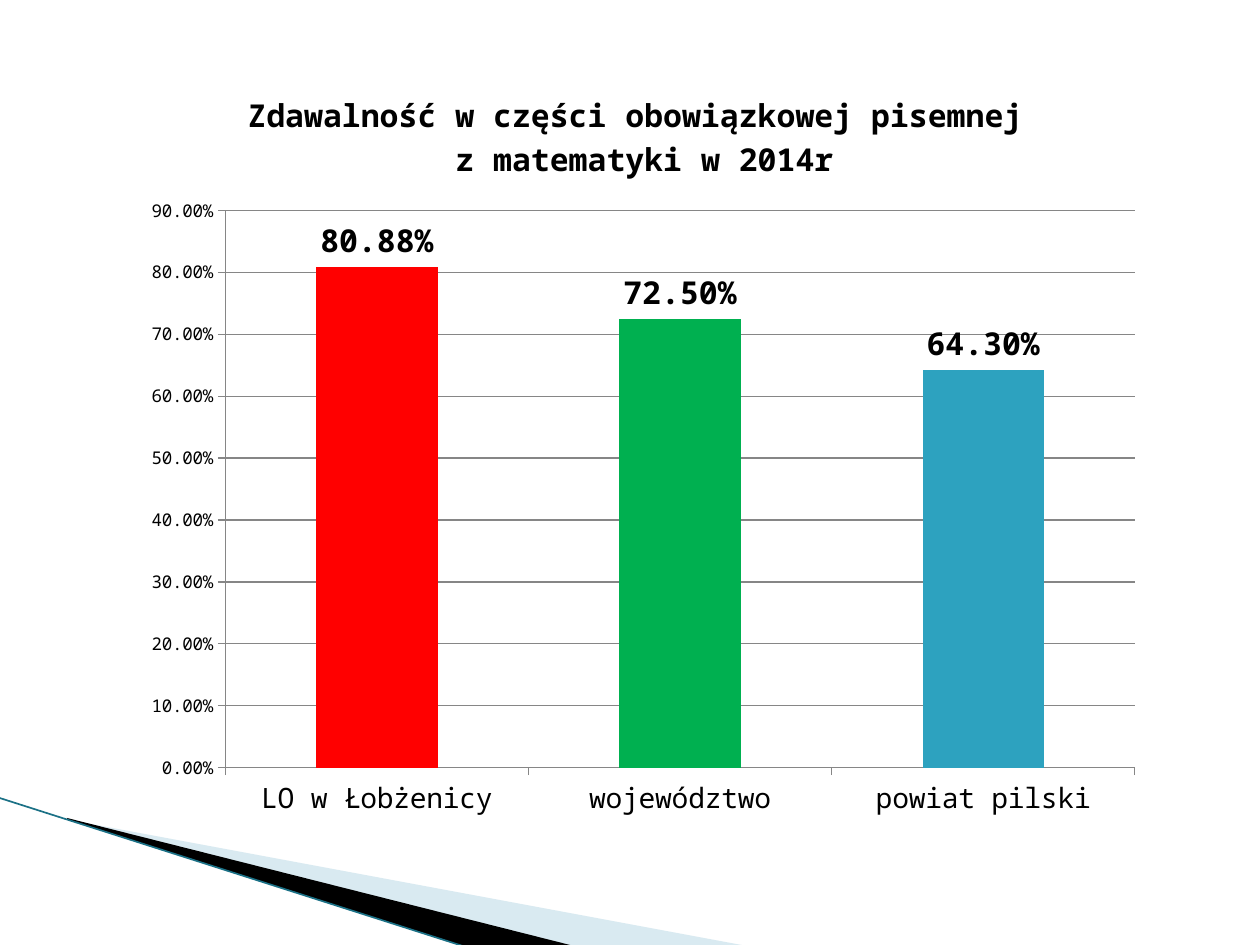
from lxml import etree
from pptx import Presentation
from pptx.chart.data import CategoryChartData
from pptx.dml.color import RGBColor
from pptx.enum.chart import XL_CHART_TYPE, XL_LABEL_POSITION, XL_TICK_MARK
from pptx.enum.shapes import MSO_CONNECTOR
from pptx.oxml import parse_xml
from pptx.oxml.ns import nsdecls, qn
from pptx.util import Cm, Pt

COLUMNS = XL_CHART_TYPE.COLUMN_CLUSTERED
ABOVE_BAR = XL_LABEL_POSITION.OUTSIDE_END
TICK_OUT = XL_TICK_MARK.OUTSIDE
STRAIGHT = MSO_CONNECTOR.STRAIGHT

FONT = "Noto Sans Mono"
PERCENT = "0.00%"
COLORS = {
    "text": "000000",
    "axis": "868686",
    "school": "FF0000",
    "province": "00B050",
    "county": "2DA2BF",
    "pale": "A0CBDC",
    "dark": "000000",
    "edge": "1B7186",
}
RESULTS = [
    ("LO w Łobżenicy", 0.8088, "school"),
    ("województwo", 0.725, "province"),
    ("powiat pilski", 0.643, "county"),
]
TITLE = ["Zdawalność w części obowiązkowej pisemnej ", "z matematyki w 2014r"]


def rgb(name):
    return RGBColor.from_string(COLORS[name])


def set_font(font, size, bold=False):
    font.name = FONT
    font.size = Pt(size)
    font.bold = bold
    font.color.rgb = rgb("text")


def add_wedge(s, left, top, points, color, alpha=None):
    """Draw a filled outline; points are in cm from left, top."""
    corners = [(Cm(left + x), Cm(top + y)) for x, y in points]
    builder = s.shapes.build_freeform(*corners[0])
    builder.add_line_segments(corners[1:])
    sp = builder.convert_to_shape()
    sp.shadow.inherit = False
    sp.line.fill.background()
    sp.fill.solid()
    sp.fill.fore_color.rgb = rgb(color)
    if alpha:
        clr = sp.fill._xPr.find(".//" + qn("a:srgbClr"))
        etree.SubElement(clr, qn("a:alpha")).set("val", str(alpha * 1000))


def add_corner(s, left, top, width, height):
    """Draw the wedges and the edge line in the lower left corner."""
    tip_x, tip_y = 1.4, 0.45
    add_wedge(s, left, top, [(tip_x, tip_y), (width, height),
                             (11.58, height), (tip_x, tip_y - 0.02)], "pale", 40)
    add_wedge(s, left, top, [(tip_x - 0.05, tip_y - 0.04), (11.61, height),
                             (9.45, height + 0.02), (tip_x - 0.03, tip_y)], "dark")
    edge = s.shapes.add_connector(STRAIGHT, Cm(left - 0.03), Cm(top),
                                  Cm(left + 9.42), Cm(top + height + 0.02))
    edge.line.color.rgb = rgb("edge")
    edge.line.width = Pt(0.95)
    etree.SubElement(edge._element.spPr, qn("a:effectLst"))


def set_plot_area(chart, x, y, w, h):
    """Fix the inner plot area, in fractions of the chart."""
    plot_area = chart._chartSpace.chart.plotArea
    for old in plot_area.findall(qn("c:layout")):
        plot_area.remove(old)
    sizes = "".join(f'<c:{tag} val="{val}"/>'
                    for tag, val in zip("xywh", (x, y, w, h)))
    plot_area.insert(0, parse_xml(
        f'<c:layout {nsdecls("c")}><c:manualLayout><c:layoutTarget val="inner"/>'
        '<c:xMode val="edge"/><c:yMode val="edge"/>'
        f'{sizes}</c:manualLayout></c:layout>'))


def add_title(chart):
    chart.has_title = True
    chart.chart_title.include_in_layout = False
    tf = chart.chart_title.text_frame
    for i, line in enumerate(TITLE):
        p = tf.add_paragraph() if i else tf.paragraphs[0]
        set_font(p.font, 18, True)
        r = p.add_run()
        r.text = line
        set_font(r.font, 18, True)


def style_axis(axis, size):
    axis.major_tick_mark = TICK_OUT
    axis.format.line.color.rgb = rgb("axis")
    axis.format.line.width = Pt(0.75)
    set_font(axis.tick_labels.font, size)


def add_results_chart(s, left, top, width, height):
    data = CategoryChartData(number_format=PERCENT)
    data.categories = [name for name, _, _ in RESULTS]
    data.add_series("Series 1", [value for _, value, _ in RESULTS])
    chart = s.shapes.add_chart(COLUMNS, Cm(left), Cm(top), Cm(width),
                               Cm(height), data).chart
    set_font(chart.font, 10)
    chart.has_legend = False
    add_title(chart)
    set_plot_area(chart, 0.09, 0.19, 0.89, 0.73)

    style_axis(chart.category_axis, 16)
    values = chart.value_axis
    style_axis(values, 10)
    values.minimum_scale, values.maximum_scale, values.major_unit = 0, 0.9, 0.1
    values.tick_labels.number_format = PERCENT
    values.tick_labels.number_format_is_linked = False
    values.has_major_gridlines = True
    values.major_gridlines.format.line.color.rgb = rgb("axis")
    values.major_gridlines.format.line.width = Pt(0.75)

    plot = chart.plots[0]
    plot.gap_width = 150
    plot.vary_by_categories = False
    series = plot.series[0]
    series.format.fill.solid()
    series.format.fill.fore_color.rgb = rgb("county")
    for i, (_, _, color) in enumerate(RESULTS[:2]):
        fill = series.points[i].format.fill
        fill.solid()
        fill.fore_color.rgb = rgb(color)

    labels = series.data_labels
    labels.show_value = True
    labels.number_format = PERCENT
    labels.number_format_is_linked = False
    labels.position = ABOVE_BAR
    set_font(labels.font, 18, True)


def main():
    prs = Presentation()
    prs.slide_width, prs.slide_height = Cm(25.4), Cm(19.05)
    s = prs.slides.add_slide(prs.slide_layouts[6])
    add_corner(s, 0, 16.08, 15.11, 3)
    add_results_chart(s, 2.69, 1.32, 20.6, 15.39)
    prs.save("out.pptx")


if __name__ == "__main__":
    main()
